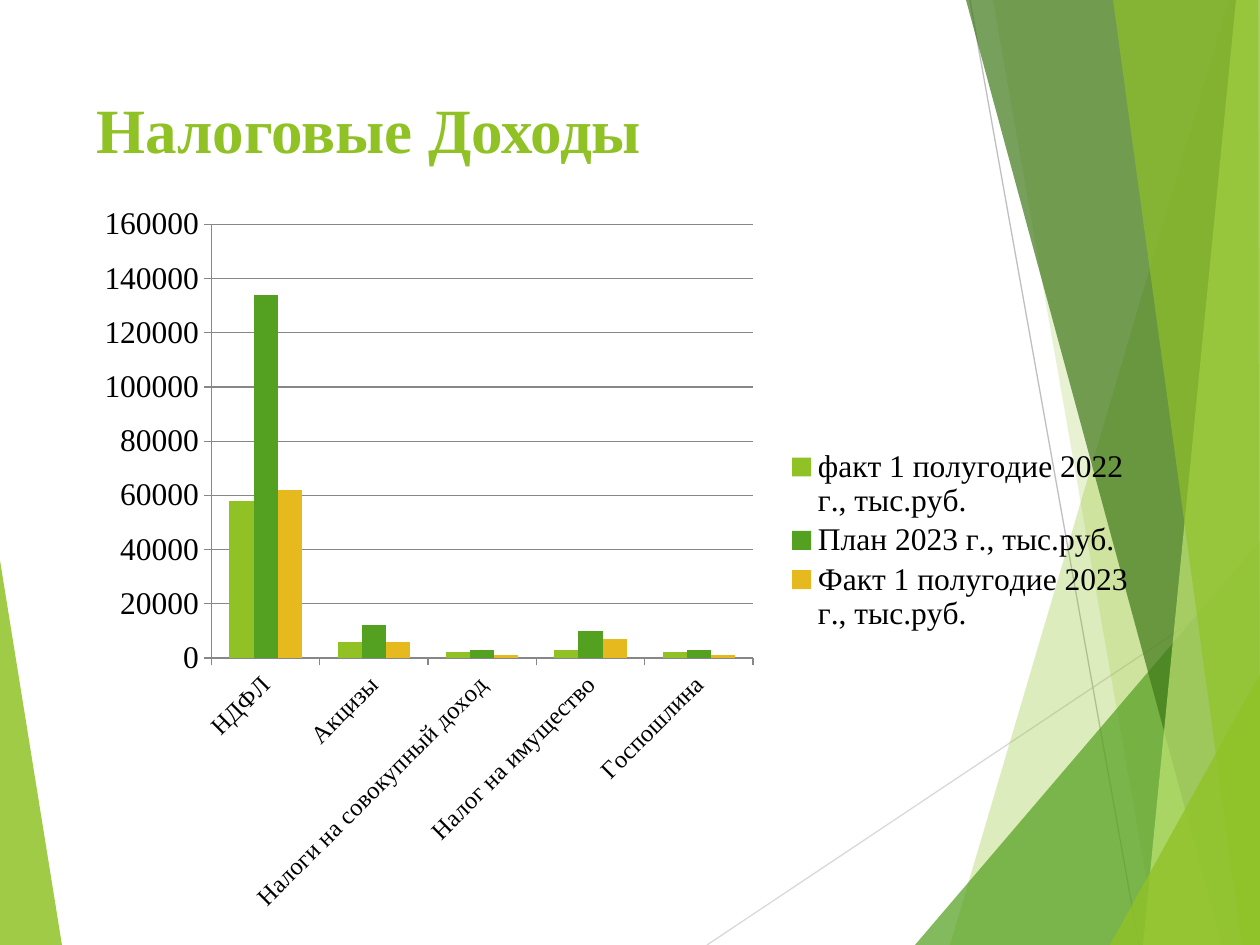
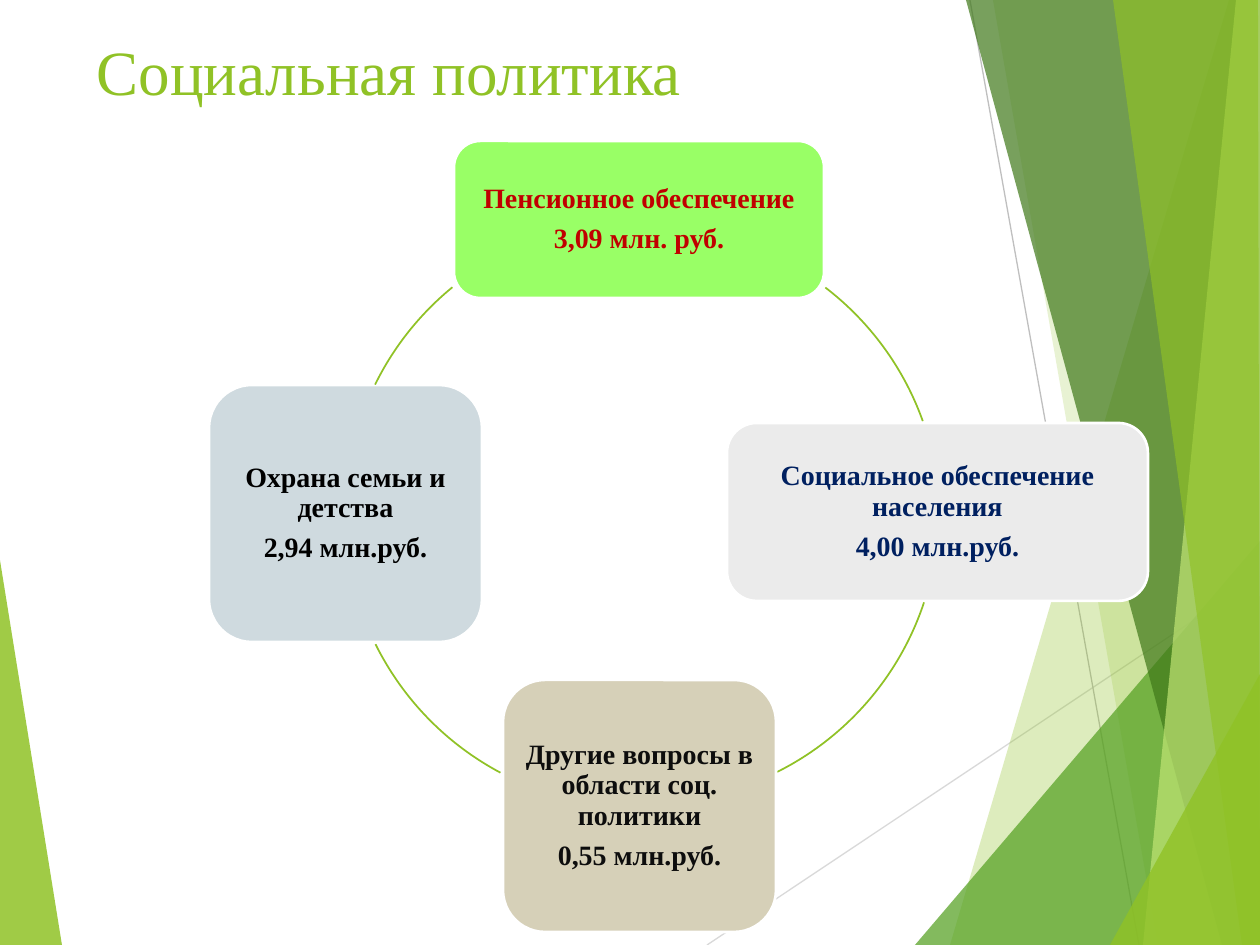
from lxml import etree
from pptx import Presentation
from pptx.chart.data import CategoryChartData
from pptx.dml.color import RGBColor
from pptx.enum.chart import XL_CHART_TYPE, XL_LEGEND_POSITION, XL_TICK_MARK
from pptx.enum.shapes import MSO_CONNECTOR, MSO_SHAPE
from pptx.enum.text import MSO_ANCHOR, MSO_AUTO_SIZE, PP_ALIGN
from pptx.oxml.ns import qn
from pptx.util import Pt

SCALE = 914400 / 126
WIDTH, HEIGHT = 1260, 945
TITLE_ONLY = 5

COLUMNS = XL_CHART_TYPE.COLUMN_CLUSTERED
LEGEND_RIGHT = XL_LEGEND_POSITION.RIGHT
TICK_OUTSIDE, TICK_NONE = XL_TICK_MARK.OUTSIDE, XL_TICK_MARK.NONE
STRAIGHT = MSO_CONNECTOR.STRAIGHT
ROUNDED, ARC = MSO_SHAPE.ROUNDED_RECTANGLE, MSO_SHAPE.ARC
TOP, MIDDLE = MSO_ANCHOR.TOP, MSO_ANCHOR.MIDDLE
LEFT, CENTER = PP_ALIGN.LEFT, PP_ALIGN.CENTER
NO_AUTOFIT = MSO_AUTO_SIZE.NONE

WHITE = RGBColor(0xFF, 0xFF, 0xFF)
BLACK = RGBColor(0x00, 0x00, 0x00)
LIME = RGBColor(0x90, 0xC2, 0x26)
GREEN = RGBColor(0x54, 0xA0, 0x21)
DARK_GREEN = RGBColor(0x3F, 0x78, 0x19)
PALE_LIME = RGBColor(0xC0, 0xE4, 0x74)
YELLOW = RGBColor(0xE6, 0xB9, 0x1E)
LIGHT_GREY = RGBColor(0xD9, 0xD9, 0xD9)
MID_GREY = RGBColor(0xBF, 0xBF, 0xBF)
AXIS_GREY = RGBColor(0x87, 0x87, 0x87)
BRIGHT_GREEN = RGBColor(0x99, 0xFF, 0x66)
SILVER = RGBColor(0xEB, 0xEB, 0xEB)
SAND = RGBColor(0xD6, 0xD0, 0xB8)
BLUE_GREY = RGBColor(0xCF, 0xDA, 0xDF)
RED = RGBColor(0xC0, 0x00, 0x00)
NAVY = RGBColor(0x00, 0x20, 0x60)
NEAR_BLACK = RGBColor(0x0D, 0x0D, 0x0D)

SERIF, CHART_FONT = "Times New Roman", "Cabin"

# Backdrop: start, end, colour of each line; colour, opacity, corners of each band.
RAYS = [((707, 945), (1260, 576), LIGHT_GREY), ((970, 0), (1139, 945), MID_GREY)]
BANDS = [
    (LIME, 85, [(0, 560), (62, 945), (0, 945)]),
    (LIME, 30, [(1229, 0), (950, 945), (1260, 945), (1260, 0)]),
    (LIME, 20, [(993, 0), (1158, 945), (1260, 945), (1260, 0)]),
    (GREEN, 72, [(915, 945), (1260, 541), (1260, 945)]),
    (DARK_GREEN, 70, [(966, 0), (1222, 945), (1260, 945), (1260, 0)]),
    (PALE_LIME, 70, [(1236, 0), (1143, 945), (1260, 945), (1260, 0)]),
    (LIME, 65, [(1113, 0), (1242, 945), (1260, 945), (1258, 0)]),
    (LIME, 80, [(1110, 945), (1260, 674), (1260, 945)]),
]

TAXES = ["НДФЛ", "Акцизы", "Налоги на совокупный доход",
         "Налог на имущество", "Госпошлина"]
TAX_SERIES = [
    ("факт 1 полугодие 2022 г., тыс.руб.", LIME, [58000, 6000, 2000, 3000, 2000]),
    ("План 2023 г., тыс.руб.", GREEN, [134000, 12000, 3000, 10000, 3000]),
    ("Факт 1 полугодие 2023 г., тыс.руб.", YELLOW, [62000, 6000, 1000, 7000, 1000]),
]

# Place, fill, text colour, heading, amount
POLICY_BOXES = [
    ((454, 141, 370, 157), BRIGHT_GREEN, RED,
     "Пенсионное обеспечение", "3,09 млн. руб."),
    ((727, 423, 421, 178), SILVER, NAVY,
     "Социальное обеспечение населения", "4,00 млн.руб."),
    ((503, 680, 273, 252), SAND, NEAR_BLACK,
     "Другие вопросы в области соц. политики", "0,55 млн.руб."),
    ((209, 385, 273, 257), BLUE_GREY, BLACK,
     "Охрана семьи и детства", "2,94 млн.руб."),
]
RING_SIZE = 586
# Left, top, start angle, end angle (clockwise from the right)
RING_ARCS = [(354, 227, 307.5, 340.3), (353, 217, 18.4, 63.4),
             (345, 221, 118, 153.6), (345, 221, 206.2, 230.7)]


def px(*lengths):
    return [round(length * SCALE) for length in lengths]


def apply(target, **values):
    for name, value in values.items():
        setattr(target, name, value)


def format_font(font, color, **values):
    apply(font, **values)
    font.color.rgb = color


def paint(shape, color, opacity=100):
    shape.shadow.inherit = False
    shape.fill.solid()
    shape.fill.fore_color.rgb = color
    if opacity < 100:
        tone = shape.element.spPr.find(".//" + qn("a:srgbClr"))
        etree.SubElement(tone, qn("a:alpha"), val=str(opacity * 1000))


def draw_line(line, color, width):
    line.color.rgb = color
    line.width = Pt(width)


def add_ray(page, start, end, color):
    ray = page.shapes.add_connector(STRAIGHT, *px(*start, *end))
    draw_line(ray.line, color, 0.75)
    etree.SubElement(ray.element.spPr, qn("a:effectLst"))
    return ray


def add_band(page, color, opacity, corners):
    builder = page.shapes.build_freeform(*corners[0], scale=SCALE)
    builder.add_line_segments(corners[1:], close=True)
    band = builder.convert_to_shape()
    paint(band, color, opacity)
    band.line.fill.background()
    return band


def add_backdrop(deck, page):
    """Draw the backdrop on the page and move it to the master for all slides."""
    first, *others = BANDS
    parts = [add_band(page, *first)]
    parts += [add_ray(page, *ray) for ray in RAYS]
    parts += [add_band(page, *band) for band in others]
    tree = deck.slide_master.element.cSld.spTree
    for number, part in enumerate(parts, start=101):
        part.element.find(".//" + qn("p:cNvPr")).set("id", str(number))
        tree.append(part.element)


def set_title(page, text, top, bold):
    title = page.shapes.title
    left, top, width, height = px(84, top, 874, 181)
    apply(title, left=left, top=top, width=width, height=height)
    frame = title.text_frame
    apply(frame, text=text, vertical_anchor=TOP, word_wrap=True, auto_size=NO_AUTOFIT)
    para = frame.paragraphs[0]
    para.alignment = LEFT
    format_font(para.runs[0].font, LIME, name=SERIF, size=Pt(36), bold=bold)


def place_part(part, index, **fractions):
    """Fix a plot area or legend at fractions of the chart's size."""
    for old in part.findall(qn("c:layout")):
        part.remove(old)
    layout = etree.Element(qn("c:layout"))
    part.insert(index, layout)
    manual = etree.SubElement(layout, qn("c:manualLayout"))
    if part.tag == qn("c:plotArea"):
        etree.SubElement(manual, qn("c:layoutTarget"), val="inner")
    for name in ("xMode", "yMode"):
        etree.SubElement(manual, qn("c:" + name), val="edge")
    for name, value in fractions.items():
        etree.SubElement(manual, qn("c:" + name), val=str(value))


def format_axis(axis, size):
    apply(axis, major_tick_mark=TICK_OUTSIDE, minor_tick_mark=TICK_NONE)
    draw_line(axis.format.line, AXIS_GREY, 0.75)
    format_font(axis.tick_labels.font, BLACK, name=SERIF, size=Pt(size))


def add_tax_chart(page):
    chart_data = CategoryChartData(number_format="General")
    chart_data.categories = TAXES
    for name, _, values in TAX_SERIES:
        chart_data.add_series(name, values)
    chart = page.shapes.add_chart(COLUMNS, *px(84, 195, 1062, 735), chart_data).chart
    apply(chart, has_title=False, has_legend=True)
    format_font(chart.font, BLACK, name=CHART_FONT, size=Pt(18))

    plot = chart.plots[0]
    apply(plot, gap_width=150, overlap=0, vary_by_categories=False)
    for series, (_, color, _) in zip(plot.series, TAX_SERIES):
        series.format.fill.solid()
        series.format.fill.fore_color.rgb = color

    format_axis(chart.category_axis, 14)
    format_axis(chart.value_axis, 18)
    apply(chart.value_axis, minimum_scale=0, maximum_scale=160000, major_unit=20000)
    draw_line(chart.value_axis.major_gridlines.format.line, AXIS_GREY, 0.75)
    category_axis = chart.element.find(".//" + qn("c:catAx"))
    category_axis.find(".//" + qn("a:bodyPr")).set("rot", str(-45 * 60000))

    apply(chart.legend, position=LEGEND_RIGHT, include_in_layout=False)
    format_font(chart.legend.font, BLACK, name=SERIF, size=Pt(18))
    place_part(chart.element.find(".//" + qn("c:plotArea")), 0,
               x=0.12, y=0.04, w=0.51, h=0.59)
    place_part(chart.element.find(".//" + qn("c:legend")), 1,
               x=0.66, y=0.34, w=0.33, h=0.26)


def add_policy_box(page, place, fill, color, *lines):
    box = page.shapes.add_shape(ROUNDED, *px(*place))
    paint(box, fill)
    draw_line(box.line, WHITE, 1.5)
    frame = box.text_frame
    margin = px(9)[0]
    apply(frame, text="\n".join(lines), word_wrap=True, vertical_anchor=MIDDLE,
          margin_left=margin, margin_right=margin,
          margin_top=margin, margin_bottom=margin)
    for para in frame.paragraphs:
        apply(para, alignment=CENTER, line_spacing=0.9, space_after=Pt(5.6))
        format_font(para.runs[0].font, color, name=SERIF, size=Pt(16), bold=True)


def add_ring_arc(page, left, top, start, end):
    arc = page.shapes.add_shape(ARC, *px(left, top, RING_SIZE, RING_SIZE))
    arc.shadow.inherit = False
    arc.fill.background()
    draw_line(arc.line, LIME, 1)
    for index, angle in enumerate((start, end)):
        arc.adjustments[index] = angle * 0.6  # 60000ths of a degree over 100000


def main():
    deck = Presentation()
    deck.slide_width, deck.slide_height = px(WIDTH, HEIGHT)
    layout = deck.slide_layouts[TITLE_ONLY]

    taxes = deck.slides.add_slide(layout)
    add_backdrop(deck, taxes)
    set_title(taxes, "Налоговые Доходы", 84, True)
    add_tax_chart(taxes)

    policy = deck.slides.add_slide(layout)
    set_title(policy, "Социальная политика", 26, False)
    for box, arc in zip(POLICY_BOXES, RING_ARCS):
        add_policy_box(policy, *box)
        add_ring_arc(policy, *arc)

    deck.save("out.pptx")


if __name__ == "__main__":
    main()
